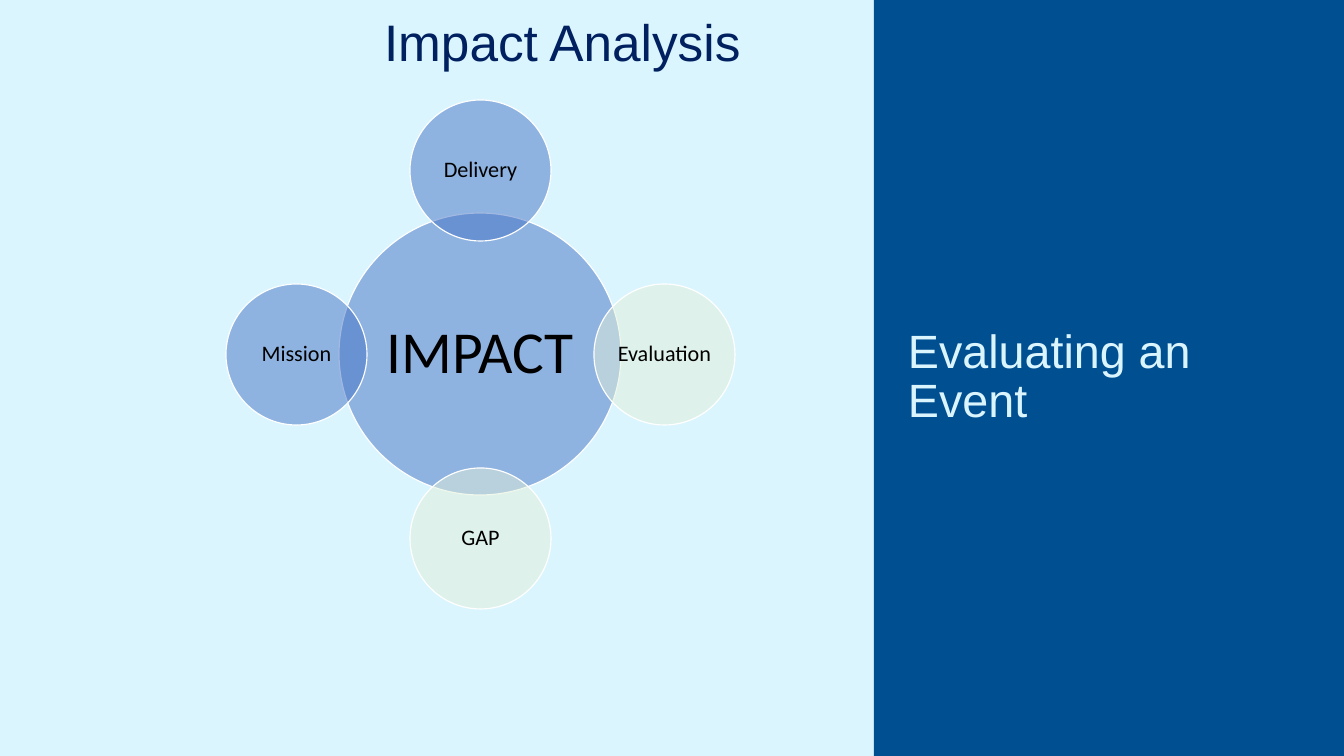
import pptx
import pptx.util
import pptx.dml.color
import pptx.enum.shapes
import pptx.enum.text
import pptx.oxml
import pptx.oxml.ns

RGBColor = pptx.dml.color.RGBColor
PALE_BLUE = RGBColor(0xDB, 0xF5, 0xFF)
PANEL_BLUE = RGBColor(0x00, 0x4F, 0x91)
NAVY = RGBColor(0x00, 0x20, 0x60)
CIRCLE_BLUE = RGBColor(0x44, 0x72, 0xC4)
CIRCLE_GREEN = RGBColor(0xE2, 0xF0, 0xD9)
WHITE = RGBColor(0xFF, 0xFF, 0xFF)
BLACK = RGBColor(0x00, 0x00, 0x00)
MIDDLE = pptx.enum.text.MSO_ANCHOR.MIDDLE
CENTER = pptx.enum.text.PP_ALIGN.CENTER
SHAPES = pptx.enum.shapes.MSO_SHAPE


def px(length):
    return round(length * 914400 / 84)


def write(box, text, font, size, color, spacing, align=None):
    box.text_frame.text = text
    para = box.text_frame.paragraphs[0]
    para.alignment = align
    para.line_spacing = spacing
    para.space_before = pptx.util.Pt(0)
    span = para.runs[0]
    span.font.name = font
    span.font.size = pptx.util.Pt(size)
    span.font.color.rgb = color


deck = pptx.Presentation()
deck.slide_width = px(1344)
deck.slide_height = px(756)
page = deck.slides.add_slide(deck.slide_layouts[5])
page.background.fill.solid()
page.background.fill.fore_color.rgb = PALE_BLUE

title = page.shapes.title
title.left, title.top, title.width, title.height = px(-17), px(13), px(1159), px(118)
title.text_frame.vertical_anchor = pptx.enum.text.MSO_ANCHOR.TOP
write(title, "Impact Analysis", "Arial", 44, NAVY, 0.9, CENTER)

panel = page.shapes.add_shape(SHAPES.RECTANGLE, px(874), 0, px(470), px(756))
panel.shadow.inherit = False
panel.fill.solid()
panel.fill.fore_color.rgb = PANEL_BLUE
panel.line.fill.background()

heading = page.shapes.add_textbox(px(874), 0, px(417), px(756))
frame = heading.text_frame
frame.word_wrap = True
frame.vertical_anchor = MIDDLE
frame.margin_left = px(34)
frame.margin_top = frame.margin_right = frame.margin_bottom = 0
write(heading, "Evaluating an Event", "Arial", 40, PALE_BLUE, pptx.util.Pt(42))

HUB_X, HUB_Y, ORBIT = 480, 354, 184
HUB, SATELLITE = 282, 141
circles = [
    ("IMPACT", 0, 0, HUB, 51, 6, CIRCLE_BLUE),
    ("Delivery", 0, -1, SATELLITE, 19, 3, CIRCLE_BLUE),
    ("Evaluation", 1, 0, SATELLITE, 19, 3, CIRCLE_GREEN),
    ("GAP", 0, 1, SATELLITE, 19, 3, CIRCLE_GREEN),
    ("Mission", -1, 0, SATELLITE, 19, 3, CIRCLE_BLUE),
]
for label, across, down, diameter, size, margin, color in circles:
    left = HUB_X + across * ORBIT - diameter // 2
    top = HUB_Y + down * ORBIT - diameter // 2
    circle = page.shapes.add_shape(SHAPES.OVAL, px(left), px(top), px(diameter), px(diameter))
    circle.shadow.inherit = False
    circle.fill.solid()
    circle.fill.fore_color.rgb = color
    fill_color = circle.fill._xPr.find(".//" + pptx.oxml.ns.qn("a:srgbClr"))
    alpha = pptx.oxml.parse_xml(f'<a:alpha {pptx.oxml.ns.nsdecls("a")} val="50000"/>')
    fill_color.append(alpha)
    circle.line.color.rgb = WHITE
    circle.line.width = pptx.util.Pt(1)
    frame = circle.text_frame
    frame.word_wrap = False
    frame.vertical_anchor = MIDDLE
    frame.margin_left = frame.margin_right = px(margin)
    frame.margin_top = frame.margin_bottom = px(margin)
    write(circle, label, "Calibri", size, BLACK, 0.9, CENTER)

deck.save("out.pptx")
